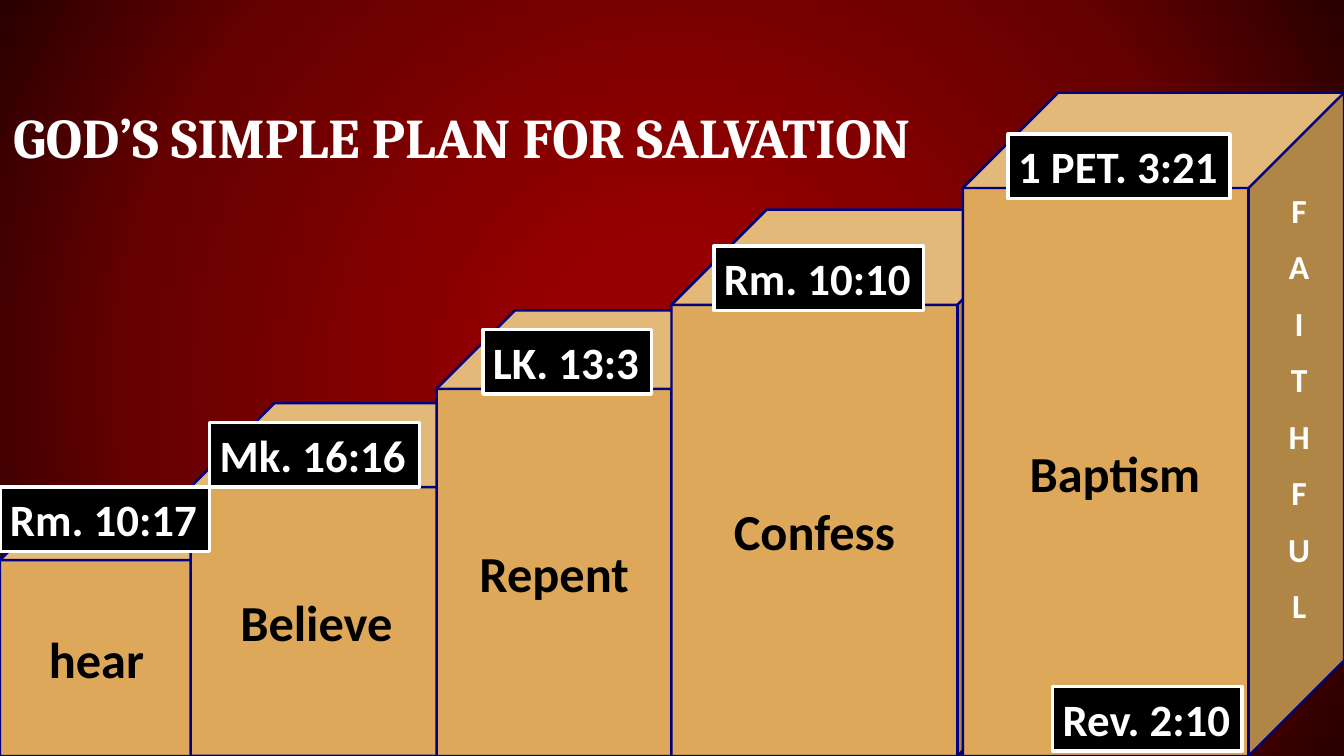
from lxml import etree
from pptx import Presentation
from pptx.dml.color import RGBColor
from pptx.enum.shapes import MSO_SHAPE as Preset
from pptx.enum.text import MSO_ANCHOR as Anchor, MSO_AUTO_SIZE as AutoSize, PP_ALIGN as Align
from pptx.oxml import parse_xml
from pptx.oxml.ns import nsdecls
from pptx.util import Inches, Pt

WHITE, BLACK, NAVY, TAN = "FFFFFF", "000000", "000080", "DDA859"
GLOW = [(17, "960000"), (71, "650000"), (100, "290000")]

STEPS = [
    ("hear", 0, 4.92, 2.55),
    ("Believe", 1.89, 4, 3.33),
    ("Repent", 4.33, 3.08, 3.11),
    ("Confess", 6.66, 2.08, 3.78),
    ("Baptism", 9.55, 0.92, 3.78),
]
VERSES = [
    ("Rm. 10:17", 0, 4.83, 2.08),
    ("Mk. 16:16", 2.08, 4.19, 2.08),
    ("LK. 13:3", 4.79, 3.27, 1.67),
    ("Rm. 10:10", 7.08, 2.44, 2.08),
    ("1 PET. 3:21", 10, 1.33, 2.2),
    ("Rev. 2:10", 10.44, 6.81, 1.88),
]


def color(value):
    return RGBColor.from_string(value)


def set_glow_background(page):
    stops = "".join(
        f'<a:gs pos="{position * 1000}"><a:srgbClr val="{value}"/></a:gs>'
        for position, value in GLOW
    )
    background = parse_xml(
        f'<p:bg {nsdecls("p", "a")}><p:bgPr><a:gradFill rotWithShape="1">'
        f'<a:gsLst>{stops}</a:gsLst><a:path path="circle">'
        '<a:fillToRect l="50000" t="50000" r="50000" b="50000"/></a:path>'
        '</a:gradFill><a:effectLst/></p:bgPr></p:bg>'
    )
    page.element.cSld.insert(0, background)


def write(para, text, size, ink, align=Align.LEFT, font="Calibri"):
    para.alignment = align
    span = para.add_run()
    span.text = text
    span.font.name = font
    span.font.size = Pt(size)
    span.font.bold = True
    span.font.color.rgb = color(ink)


def place(box, left, top, width, height):
    box.left, box.top = Inches(left), Inches(top)
    box.width, box.height = Inches(width), Inches(height)


def add_title(page, text):
    title = page.shapes.title
    place(title, 0, 0.5, 11.33, 1.25)
    frame = title.text_frame
    frame.auto_size = AutoSize.NONE
    frame.vertical_anchor = Anchor.BOTTOM
    frame.margin_left = frame.margin_right = Inches(0.13)
    frame.margin_top = frame.margin_bottom = Inches(0.07)
    para = frame.paragraphs[0]
    para.line_spacing = 0.8
    write(para, text, 40, WHITE, font="Cambria")


def add_solid(page, preset, bounds, fill, line, weight):
    box = page.shapes.add_shape(preset, *map(Inches, bounds))
    box.shadow.inherit = False
    box.fill.solid()
    box.fill.fore_color.rgb = color(fill)
    box.line.color.rgb = color(line)
    box.line.width = Pt(weight)
    return box


def add_step(page, text, left, top, width):
    cube = add_solid(page, Preset.CUBE, (left, top, width, 7.5 - top), TAN, NAVY, 1.75)
    cube.adjustments[0] = 0.25
    frame = cube.text_frame
    frame.word_wrap = True
    frame.vertical_anchor = Anchor.MIDDLE
    if text == "Baptism":
        frame.margin_left = Inches(0.28)
    write(frame.paragraphs[0], text, 36, BLACK, Align.CENTER)


def add_verse(page, text, left, top, width):
    label = add_solid(page, Preset.RECTANGLE, (left, top, width, 0.64), BLACK, WHITE, 2.5)
    frame = label.text_frame
    frame.word_wrap = False
    frame.auto_size = AutoSize.SHAPE_TO_FIT_TEXT
    frame.vertical_anchor = Anchor.TOP
    write(frame.paragraphs[0], text, 32, WHITE)


def add_vertical_word(page, word):
    box = page.shapes.add_textbox(Inches(12.44), Inches(1.83), Inches(0.89), Inches(5.35))
    frame = box.text_frame
    frame.word_wrap = True
    for index, letter in enumerate(word):
        para = frame.add_paragraph() if index else frame.paragraphs[0]
        para.space_after = Pt(11.6)
        write(para, letter, 24, WHITE, Align.CENTER)


def main():
    deck = Presentation()
    deck.slide_width, deck.slide_height = Inches(13.33), Inches(7.5)
    page = deck.slides.add_slide(deck.slide_layouts[5])
    set_glow_background(page)
    add_title(page, "GOD’S SIMPLE PLAN FOR SALVATION")
    for step in STEPS:
        add_step(page, *step)
    for verse in VERSES:
        add_verse(page, *verse)
    add_vertical_word(page, "FAITHFUL")
    deck.save("out.pptx")


if __name__ == "__main__":
    main()
